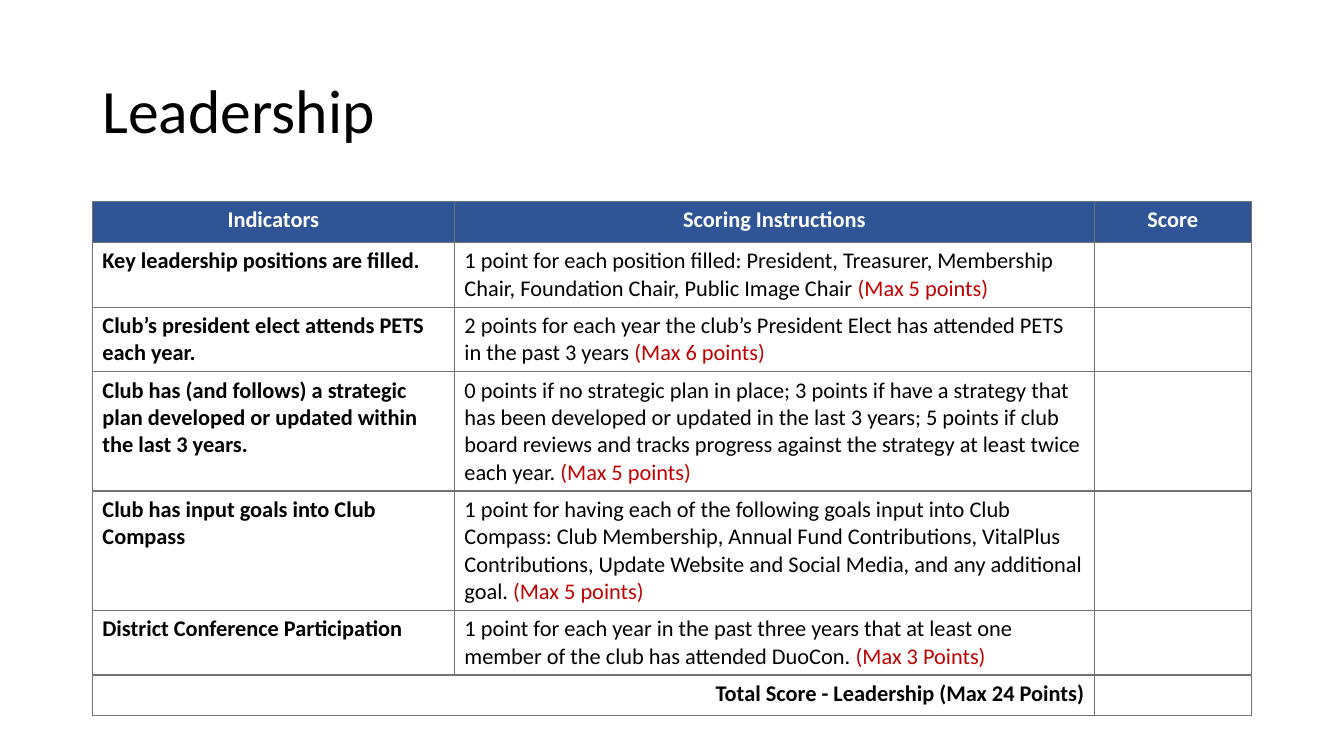
from lxml import etree
from pptx import Presentation
from pptx.dml.color import RGBColor
from pptx.enum.text import MSO_ANCHOR, PP_ALIGN
from pptx.oxml.ns import qn
from pptx.util import Pt

TITLE = "Leadership"
HEADERS = ["Indicators", "Scoring Instructions", "Score"]
INDICATORS = [
    ("Key leadership positions are filled.",
     "1 point for each position filled: President, Treasurer, Membership Chair, "
     "Foundation Chair, Public Image Chair ",
     "(Max 5 points)", 2),
    ("Club’s president elect attends PETS each year.",
     "2 points for each year the club’s President Elect has attended PETS "
     "in the past 3 years ",
     "(Max 6 points)", 2),
    ("Club has (and follows) a strategic plan developed or updated within the last 3 years.",
     "0 points if no strategic plan in place; 3 points if have a strategy that has been "
     "developed or updated in the last 3 years; 5 points if club board reviews and tracks "
     "progress against the strategy at least twice each year. ",
     "(Max 5 points)", 4),
    ("Club has input goals into Club Compass",
     "1 point for having each of the following goals input into Club Compass: "
     "Club Membership, Annual Fund Contributions, VitalPlus Contributions, "
     "Update Website and Social Media, and any additional goal. ",
     "(Max 5 points)", 4),
    ("District Conference Participation",
     "1 point for each year in the past three years that at least one member "
     "of the club has attended DuoCon. ",
     "(Max 3 Points)", 2),
]
TOTAL = "Total Score - Leadership (Max 24 Points)"

FONT = "Calibri"
BLACK = RGBColor(0x00, 0x00, 0x00)
WHITE = RGBColor(0xFF, 0xFF, 0xFF)
RED = RGBColor(0xC0, 0x00, 0x00)
BLUE = RGBColor(0x2F, 0x55, 0x97)
GRAY = RGBColor(0x76, 0x71, 0x71)
LEFT, CENTER, RIGHT = PP_ALIGN.LEFT, PP_ALIGN.CENTER, PP_ALIGN.RIGHT
MIDDLE = MSO_ANCHOR.MIDDLE

MARGIN, WIDTH = 66, 828
TABLE_TOP = 144
COLUMNS = [258.6, 457.2, 111.9]
SINGLE_ROW, LINE_HEIGHT, CELL_PADDING = 29.2, 19.5, 7.2


def add_run(p, text, size, color, bold=False):
    r = p.add_run()
    r.text = text
    r.font.name = FONT
    r.font.size = Pt(size)
    r.font.bold = bold
    r.font.color.rgb = color


def fill_cell(cell, runs, align=LEFT):
    p = cell.text_frame.paragraphs[0]
    p.alignment = align
    for text, color, bold in runs:
        add_run(p, text, 16, color, bold)


def style_cell(cell, color=None):
    tc_pr = cell._tc.get_or_add_tcPr()
    for side in ("a:lnL", "a:lnR", "a:lnT", "a:lnB"):
        ln = etree.SubElement(tc_pr, qn(side), w=str(Pt(1)))
        solid = etree.SubElement(ln, qn("a:solidFill"))
        etree.SubElement(solid, qn("a:srgbClr"), val=str(GRAY))
    if color is None:
        cell.fill.background()
    else:
        cell.fill.solid()
        cell.fill.fore_color.rgb = color


def add_title(s):
    tf = s.shapes.add_textbox(Pt(MARGIN), Pt(28.75), Pt(WIDTH), Pt(104.4)).text_frame
    tf.word_wrap = True
    tf.vertical_anchor = MIDDLE
    p = tf.paragraphs[0]
    p.line_spacing = 0.9
    add_run(p, TITLE, 44, BLACK)


def add_score_table(s):
    heights = [SINGLE_ROW]
    heights += [lines * LINE_HEIGHT + CELL_PADDING for *_, lines in INDICATORS]
    heights.append(SINGLE_ROW)
    table = s.shapes.add_table(len(heights), len(COLUMNS), Pt(MARGIN), Pt(TABLE_TOP),
                               Pt(sum(COLUMNS)), Pt(sum(heights))).table
    table.first_row = table.horz_banding = False
    for column, width in zip(table.columns, COLUMNS):
        column.width = Pt(width)
    for i, (row, height) in enumerate(zip(table.rows, heights)):
        row.height = Pt(height)
        for cell in row.cells:
            style_cell(cell, BLUE if i == 0 else None)

    for j, header in enumerate(HEADERS):
        fill_cell(table.cell(0, j), [(header, WHITE, True)], CENTER)
    for i, (indicator, scoring, maximum, _) in enumerate(INDICATORS, 1):
        fill_cell(table.cell(i, 0), [(indicator, BLACK, True)])
        fill_cell(table.cell(i, 1), [(scoring, BLACK, False), (maximum, RED, False)])
    last = len(heights) - 1
    table.cell(last, 0).merge(table.cell(last, 1))
    fill_cell(table.cell(last, 0), [(TOTAL, BLACK, True)], RIGHT)


def main():
    prs = Presentation()
    prs.slide_width, prs.slide_height = Pt(960), Pt(540)
    s = prs.slides.add_slide(prs.slide_layouts[6])
    add_title(s)
    add_score_table(s)
    prs.save("out.pptx")


if __name__ == "__main__":
    main()
